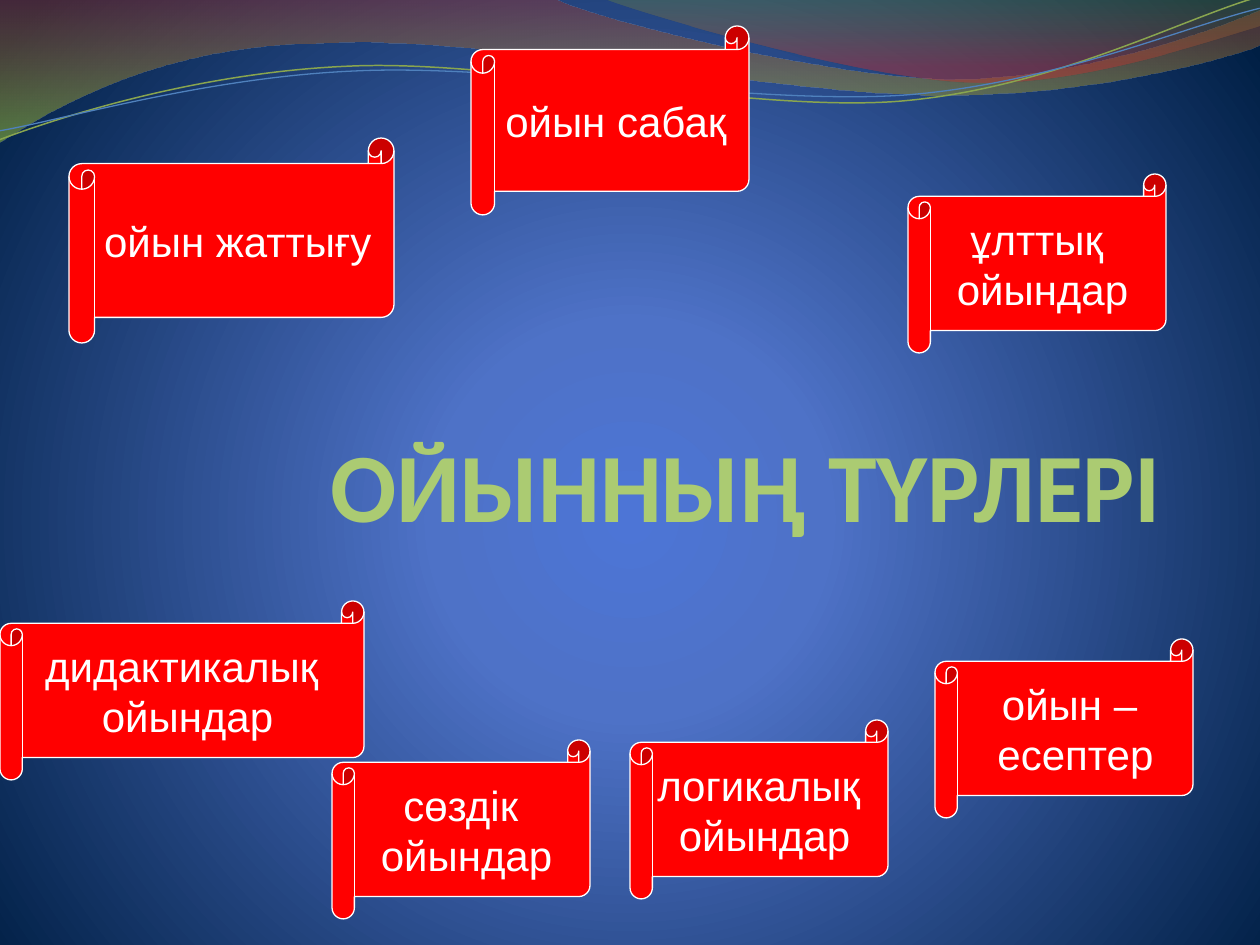
from lxml import etree
from pptx import Presentation
from pptx.dml.color import RGBColor
from pptx.enum.shapes import MSO_SHAPE
from pptx.enum.text import MSO_ANCHOR, PP_ALIGN
from pptx.oxml import parse_xml
from pptx.oxml.ns import nsdecls, qn
from pptx.util import Pt

SCALE = 914400 / 126
SCROLL = MSO_SHAPE.HORIZONTAL_SCROLL
MIDDLE, BOTTOM = MSO_ANCHOR.MIDDLE, MSO_ANCHOR.BOTTOM
CENTER, RIGHT = PP_ALIGN.CENTER, PP_ALIGN.RIGHT

# Content: lines of text, then left, top, width, height in px
TITLE = (["ОЙЫННЫҢ ТҮРЛЕРІ"], (93, 325, 1071, 217))
SCROLLS = [
    (["ойын жаттығу"], (69, 138, 325, 205)),
    (["ойын сабақ"], (471, 26, 278, 189)),
    (["дидактикалық ", "ойындар"], (0, 601, 364, 179)),
    (["ойын –", " есептер"], (935, 639, 258, 179)),
    (["ұлттық ", "ойындар"], (908, 174, 258, 179)),
    (["логикалық ", "ойындар"], (630, 720, 258, 179)),
    (["сөздік ", "ойындар"], (332, 740, 258, 179)),
]

# Gradient stops: position %, colour, opacity %
BACKGROUND = [(0, "4D75D6", 100), (25, "4E72C7", 100), (100, "001F44", 100)]

# Outlines: a pair is a straight step, three pairs are a Bezier step
WAVES = [
    ([(0, -1), (554, -1),
      ((600, 21), (837, 79), (955, 79)), ((1075, 79), (1207, 33), (1260, 11)),
      (1261, 45), ((1239, 55), (1096, 96), (940, 95)),
      ((784, 95), (481, 35), (324, 43)), ((163, 44), (58, 105), (-1, 142))],
     [(0, "973330", 45), (100, "95C238", 55)]),
    ([(604, -1), ((641, 14), (859, 78), (969, 82)),
      ((1079, 87), (1211, 40), (1260, 26)), (1260, 0)],
     [(0, "769537", 30), (80, "BE3330", 45)]),
]
STRAND_ANGLE = 357.3
STRANDS = [
    ([(-3, 110), ((59, 90), (199, 52), (350, 53)),
      ((499, 53), (745, 118), (896, 114)), ((1049, 109), (1184, 45), (1260, 27))],
     "89A54F", 0.85),
    ([(-2, 101), ((57, 94), (207, 57), (357, 58)),
      ((509, 58), (750, 111), (902, 108)), ((1052, 104), (1188, 52), (1262, 38))],
     "4F81BD", 0.75),
]


def px(value):
    return round(value * SCALE)


def color(value):
    return RGBColor.from_string(value)


def gradient_xml(stops, direction):
    stop_xml = "".join(
        f'<a:gs pos="{position * 1000}"><a:srgbClr val="{value}">'
        f'<a:alpha val="{opacity * 1000}"/></a:srgbClr></a:gs>'
        for position, value, opacity in stops)
    return (f'<a:gradFill {nsdecls("a")} rotWithShape="1">'
            f'<a:gsLst>{stop_xml}</a:gsLst>{direction}</a:gradFill>')


def add_outline(slide, steps, close):
    """Draw the end points as a freeform, then bend its Bezier steps."""
    ends = [step if len(step) == 2 else step[-1] for step in steps]
    start, *rest = [(px(x), px(y)) for x, y in ends]
    builder = slide.shapes.build_freeform(*start, scale=1.0)
    builder.add_line_segments(rest, close=close)
    shape = builder.convert_to_shape()
    shape.shadow.inherit = False
    segments = list(shape.element.spPr.iter(qn("a:lnTo")))
    for segment, step in zip(segments, steps[1:]):
        if len(step) == 3:
            curve = etree.Element(qn("a:cubicBezTo"))
            for x, y in step:
                etree.SubElement(curve, qn("a:pt"), x=str(px(x) - shape.left),
                                 y=str(px(y) - shape.top))
            segment.getparent().replace(segment, curve)
    return shape


def write_text(shape, lines, *, font, size, fill, bold=False, align=CENTER,
               anchor=MIDDLE, wrap=False):
    frame = shape.text_frame
    frame.word_wrap = wrap
    frame.vertical_anchor = anchor
    for index, line in enumerate(lines):
        paragraph = frame.add_paragraph() if index else frame.paragraphs[0]
        paragraph.alignment = align
        run = paragraph.add_run()
        run.text = line
        run.font.name = font
        run.font.size = Pt(size)
        run.font.bold = bold
        run.font.color.rgb = color(fill)


presentation = Presentation()
presentation.slide_width, presentation.slide_height = px(1260), px(945)
slide = presentation.slides.add_slide(presentation.slide_layouts[6])

# Background glow
glow = gradient_xml(BACKGROUND, '<a:path path="circle"><a:fillToRect l="10000" '
                    't="110000" r="10000" b="100000"/></a:path>')
slide.element.cSld.insert(0, parse_xml(
    f'<p:bg {nsdecls("p", "a")}><p:bgPr>{glow}<a:effectLst/></p:bgPr></p:bg>'))

# Waves along the top
for steps, stops in WAVES:
    wave = add_outline(slide, steps, close=True)
    wave.line.fill.background()
    gradient = gradient_xml(stops, '<a:lin ang="5400000" scaled="1"/>')
    wave.element.spPr.insert(2, parse_xml(gradient))

# Thin strands across the waves
for steps, stroke, width in STRANDS:
    strand = add_outline(slide, steps, close=False)
    strand.rotation = STRAND_ANGLE
    strand.fill.background()
    strand.line.color.rgb = color(stroke)
    strand.line.width = Pt(width)

# Title
lines, box = TITLE
title = slide.shapes.add_textbox(*map(px, box))
frame = title.text_frame
frame.margin_left = frame.margin_top = frame.margin_bottom = 0
frame.margin_right = px(2)
write_text(title, lines, font="Calibri", size=56, fill="ABCB72", bold=True,
           align=RIGHT, anchor=BOTTOM, wrap=True)

# Scrolls naming the kinds of game
for lines, box in SCROLLS:
    scroll = slide.shapes.add_shape(SCROLL, *map(px, box))
    scroll.shadow.inherit = False
    scroll.fill.solid()
    scroll.fill.fore_color.rgb = color("FF0000")
    scroll.line.color.rgb = color("FFFFFF")
    scroll.line.width = Pt(0.75)
    write_text(scroll, lines, font="Arial", size=24, fill="FFFFFF")

presentation.save("out.pptx")
